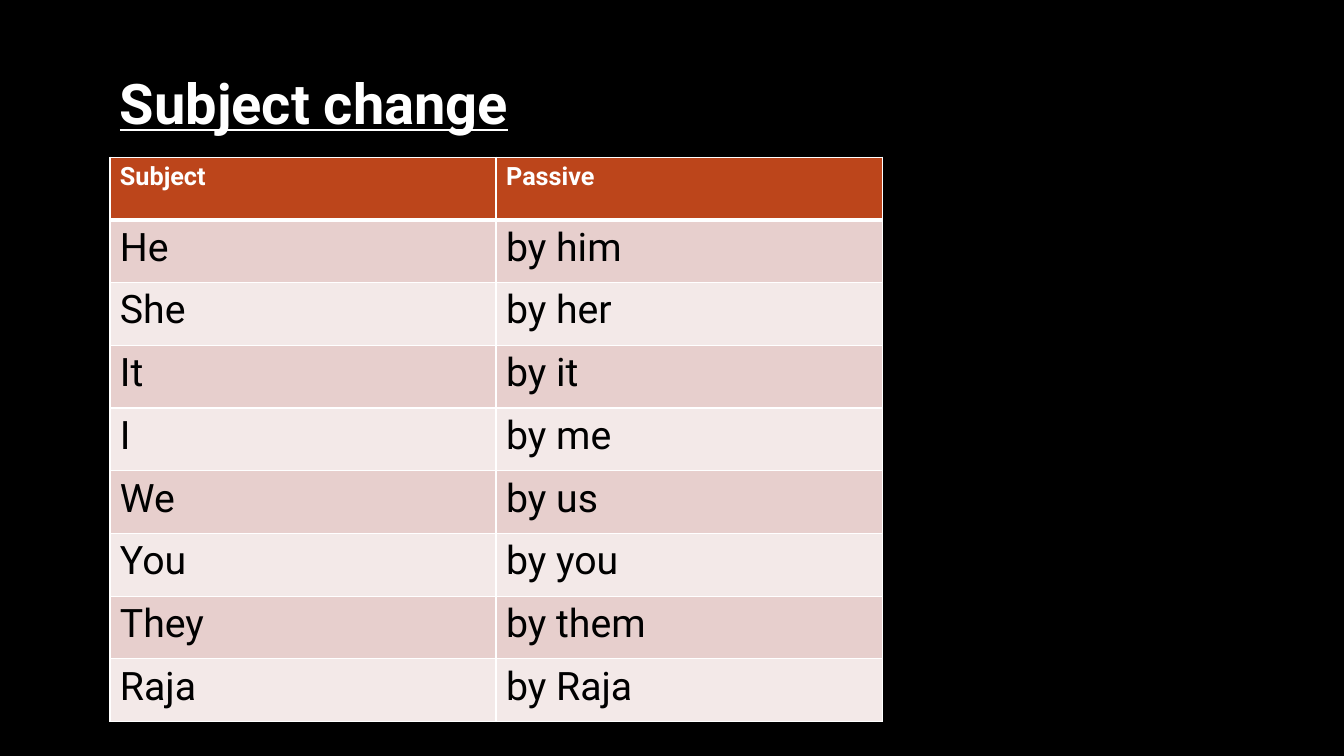
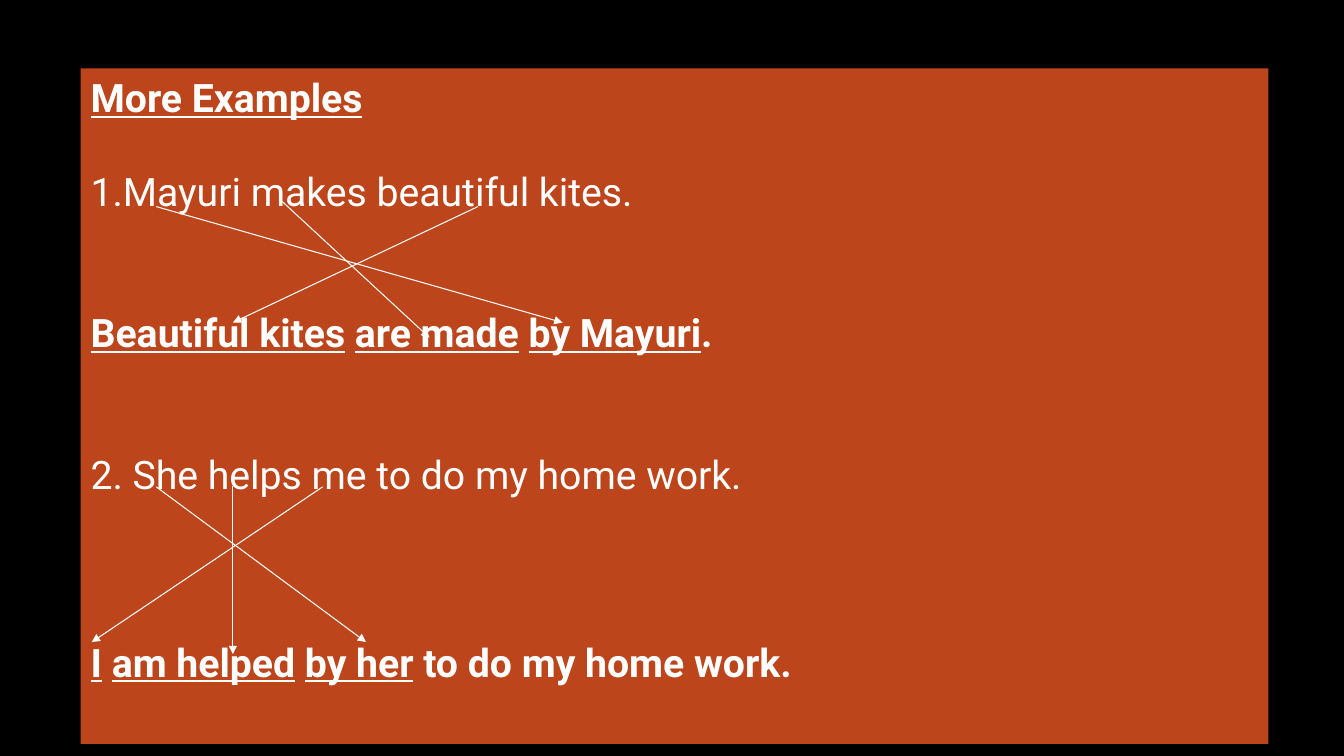
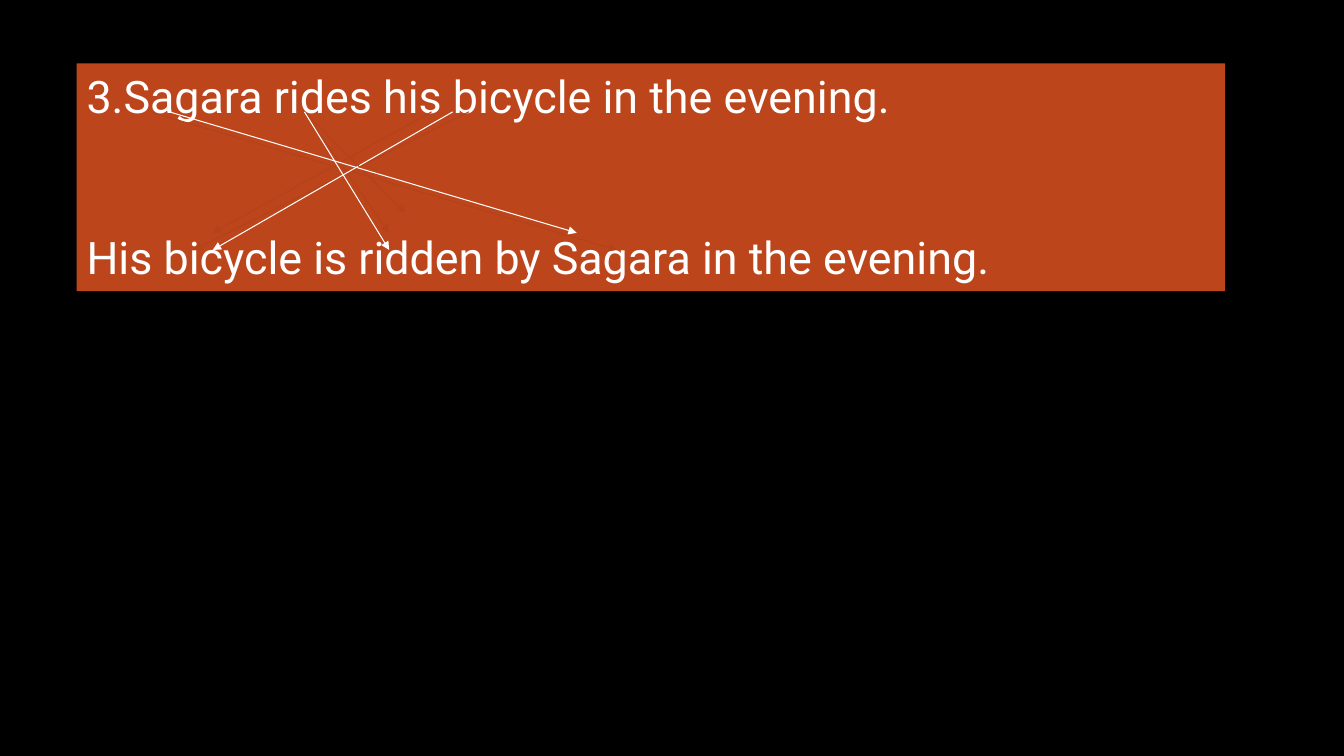
from lxml.etree import SubElement
from pptx import Presentation
from pptx.dml.color import RGBColor
from pptx.enum.shapes import MSO_CONNECTOR, MSO_SHAPE
from pptx.enum.text import MSO_ANCHOR, PP_ALIGN
from pptx.oxml import parse_xml
from pptx.oxml.ns import nsdecls, qn
from pptx.util import Inches, Pt

BLACK = RGBColor(0x00, 0x00, 0x00)
WHITE = RGBColor(0xFF, 0xFF, 0xFF)
RUST = RGBColor(0xBC, 0x45, 0x1B)
FAINT_RUST = RGBColor(0xB4, 0x42, 0x1A)
ROSE = RGBColor(0xE7, 0xCF, 0xCD)
PALE_ROSE = RGBColor(0xF3, 0xE9, 0xE8)

FONT = "Roboto"
LINE_HEIGHT = 1.2
PLAIN = (False, False)
BOLD = (True, False)
MARKED = (True, True)


class Deck:
    def __init__(self):
        self.presentation = Presentation()
        self.presentation.slide_width = Inches(13.33)
        self.presentation.slide_height = Inches(7.5)
        self.slide = None

    def add_slide(self):
        layout = self.presentation.slide_layouts[6]
        self.slide = self.presentation.slides.add_slide(layout)
        fill = self.slide.background.fill
        fill.solid()
        fill.fore_color.rgb = BLACK

    def add_text(self, paragraph, text, size, style=PLAIN, color=WHITE):
        run = paragraph.add_run()
        run.text = text
        run.font.name = FONT
        run.font.size = Pt(size)
        run.font.bold, run.font.underline = style
        run.font.color.rgb = color

    def title(self, text):
        box = self.slide.shapes.add_textbox(
            Inches(1.09), Inches(0.63), Inches(10.68), Inches(0.77))
        box.text_frame.word_wrap = True
        self.add_text(box.text_frame.paragraphs[0], text, 40, MARKED)

    def panel(self, left, top, width, height, size, lines):
        shape = self.slide.shapes.add_shape(
            MSO_SHAPE.RECTANGLE, Inches(left), Inches(top), Inches(width), Inches(height))
        shape.shadow.inherit = False
        shape.fill.solid()
        shape.fill.fore_color.rgb = RUST
        shape.line.fill.background()
        frame = shape.text_frame
        frame.word_wrap = True
        frame.vertical_anchor = MSO_ANCHOR.TOP
        for index, (lines_above, runs) in enumerate(lines):
            paragraph = frame.add_paragraph() if index else frame.paragraphs[0]
            paragraph.alignment = PP_ALIGN.LEFT
            if lines_above:
                paragraph.space_before = Pt(lines_above * size * LINE_HEIGHT)
            for text, style in runs:
                self.add_text(paragraph, text, size, style)

    def arrow(self, start, end, color=WHITE):
        points = [Inches(value) for value in (*start, *end)]
        connector = self.slide.shapes.add_connector(MSO_CONNECTOR.STRAIGHT, *points)
        connector.line.color.rgb = color
        connector.line.width = Pt(0.75)
        SubElement(connector.line._get_or_add_ln(), qn("a:tailEnd"), type="triangle")
        SubElement(connector._element.spPr, qn("a:effectLst"))

    def border(self, cell, top, bottom):
        properties = cell._tc.get_or_add_tcPr()
        sides = (("lnL", 1), ("lnR", 1), ("lnT", top), ("lnB", bottom))
        for index, (side, width) in enumerate(sides):
            properties.insert(index, parse_xml(
                f'<a:{side} {nsdecls("a")} w="{Pt(width)}"><a:solidFill>'
                f'<a:srgbClr val="{WHITE}"/></a:solidFill></a:{side}>'))

    def table(self, left, top, width, height, rows):
        table = self.slide.shapes.add_table(
            len(rows), len(rows[0]),
            Inches(left), Inches(top), Inches(width), Inches(height)).table
        for row_index, row in enumerate(rows):
            header = row_index == 0
            background = RUST if header else (PALE_ROSE, ROSE)[row_index % 2]
            for column_index, text in enumerate(row):
                cell = table.cell(row_index, column_index)
                cell.fill.solid()
                cell.fill.fore_color.rgb = background
                self.border(cell, 3 if row_index == 1 else 1, 3 if header else 1)
                paragraph = cell.text_frame.paragraphs[0]
                if header:
                    self.add_text(paragraph, text, 18, BOLD)
                else:
                    self.add_text(paragraph, text, 28, PLAIN, BLACK)


def subject_change(deck):
    deck.add_slide()
    deck.title("Subject change")
    pronouns = (("He", "him"), ("She", "her"), ("It", "it"), ("I", "me"),
                ("We", "us"), ("You", "you"), ("They", "them"), ("Raja", "Raja"))
    rows = [("Subject", "Passive")]
    rows += [(subject, f"by {agent}") for subject, agent in pronouns]
    deck.table(1.09, 1.56, 7.66, 5.6, rows)


def more_examples(deck):
    deck.add_slide()
    deck.panel(0.8, 0.68, 11.78, 6.7, 28, (
        (0, [("More Examples", MARKED)]),
        (1, [("1.Mayuri makes beautiful kites.", PLAIN)]),
        (2, [("Beautiful kites", MARKED), (" ", PLAIN), ("are made", MARKED),
             (" ", BOLD), ("by Mayuri", MARKED), (".", BOLD)]),
        (2, [("2. She helps me to do my home work.", PLAIN)]),
        (3, [("I", MARKED), (" ", BOLD), ("am helped", MARKED), (" ", BOLD),
             ("by her", MARKED), (" to do my home work.", BOLD)]),
    ))
    for start, end in (
        ((4.74, 2.05), (2.31, 3.2)),
        ((2.8, 2), (4.26, 3.35)),
        ((1.55, 2.05), (5.58, 3.2)),
        ((3.2, 4.83), (0.91, 6.37)),
        ((2.31, 4.82), (2.31, 6.49)),
        ((1.55, 4.83), (3.63, 6.37)),
    ):
        deck.arrow(start, end)


def bicycle_example(deck):
    deck.add_slide()
    deck.panel(0.76, 0.63, 11.39, 2.26, 32, (
        (0, [("3.Sagara rides his bicycle in the evening.", PLAIN)]),
        (2, [("His bicycle is ridden by Sagara in the evening.", PLAIN)]),
    ))
    arrow_top = 1.11
    for start_x, end, color in (
        (4.28, (2.11, 2.31), FAINT_RUST),
        (4.65, (1.92, 2.48), FAINT_RUST),
        (3.02, (3.86, 2.31), FAINT_RUST),
        (1.49, (6.12, 2.48), FAINT_RUST),
        (4.49, (2.11, 2.48), WHITE),
        (3.02, (4.02, 2.11), FAINT_RUST),
        (3.02, (3.86, 2.48), WHITE),
        (1.68, (5.72, 2.31), WHITE),
    ):
        deck.arrow((start_x, arrow_top), end, color)


def main():
    deck = Deck()
    subject_change(deck)
    more_examples(deck)
    bicycle_example(deck)
    deck.presentation.save("out.pptx")


if __name__ == "__main__":
    main()
